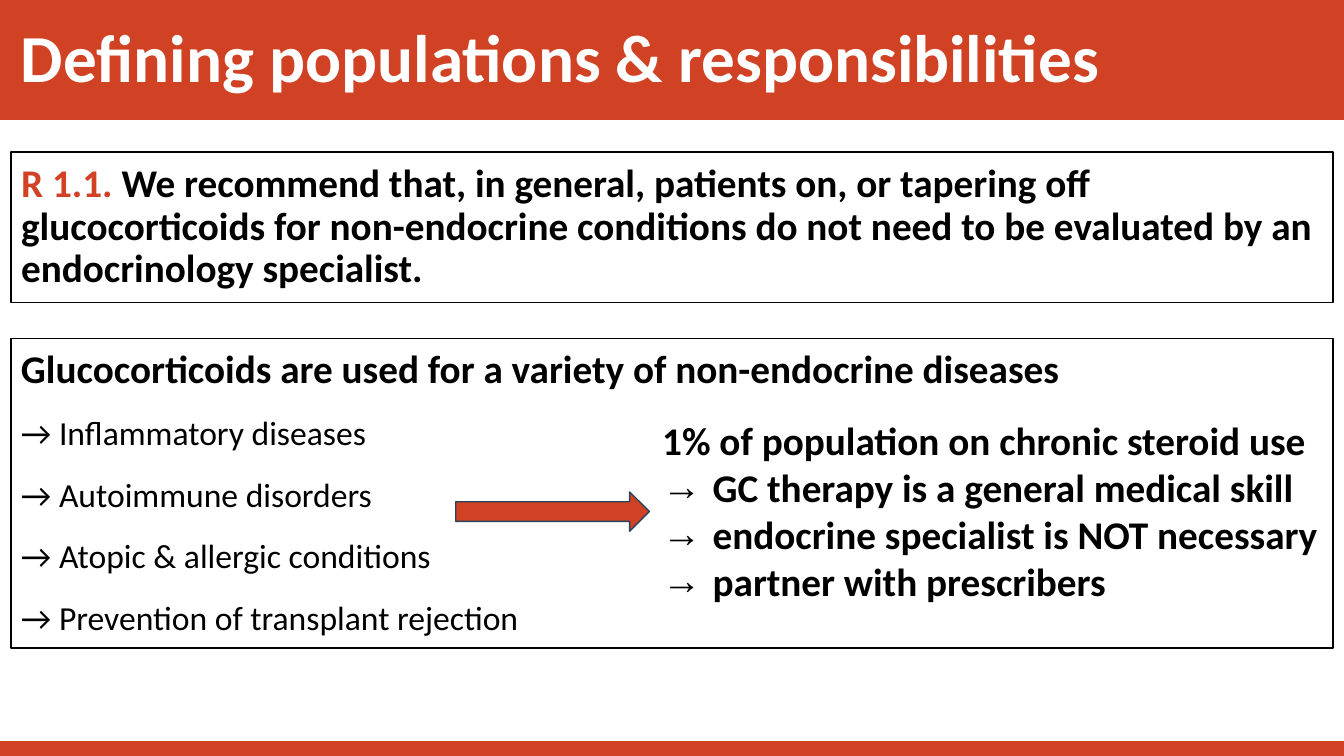
import pptx
import pptx.util
import pptx.dml.color
import pptx.enum.shapes
import pptx.enum.text
import lxml.etree

# Content: each paragraph is a list of (text, format) runs
RED, BLACK, WHITE, NAVY = "D14224", "000000", "FFFFFF", "28445D"
HEADING = "Defining populations & responsibilities"
RECOMMENDATION = [
    ("R 1.1. ", RED),
    ("We recommend that, in general, patients on, or tapering off "
     "glucocorticoids for non-endocrine conditions do not need to be "
     "evaluated by an endocrinology specialist.", BLACK),
]
USES_TITLE = "Glucocorticoids are used for a variety of non-endocrine diseases"
USES = ["Inflammatory diseases", "Autoimmune disorders",
        "Atopic & allergic conditions", "Prevention of transplant rejection"]
FACT = "1% of population on chronic steroid use"
CONSEQUENCES = ["GC therapy is a general medical skill",
                "endocrine specialist is NOT necessary",
                "partner with prescribers"]

# Layout in inches
W, H = 13.33, 7.5
MARGIN = 0.11
INNER = W - 2 * MARGIN
HEADER_H, FOOTER_H = 1.18, 0.14
SHAPES = pptx.enum.shapes.MSO_SHAPE
ANCHOR = pptx.enum.text.MSO_ANCHOR


def color(value):
    return pptx.dml.color.RGBColor.from_string(value)


def paint(sp, fill, line):
    sp.fill.solid()
    sp.fill.fore_color.rgb = color(fill)
    sp.line.color.rgb = color(line)
    sp.line.width = pptx.util.Pt(1)


def place(sp, left, top, width, height):
    sp.left, sp.top, sp.width, sp.height = map(
        pptx.util.Inches, (left, top, width, height))


def add_box(s, box, fill, line, kind=SHAPES.RECTANGLE):
    sp = s.shapes.add_shape(kind, *map(pptx.util.Inches, box))
    sp.shadow.inherit = False
    paint(sp, fill, line)
    return sp


def prepare(sp, anchor=ANCHOR.MIDDLE):
    tf = sp.text_frame
    tf.word_wrap = True
    tf.auto_size = pptx.enum.text.MSO_AUTO_SIZE.NONE
    tf.vertical_anchor = anchor
    return tf


def add_bullet(p, char):
    pPr = p._p.get_or_add_pPr()
    pPr.set("marL", str(pptx.util.Inches(0.5)))
    pPr.set("indent", str(-pptx.util.Inches(0.5)))
    for tag, key, value in (("buFont", "typeface", "Arial"), ("buChar", "char", char)):
        lxml.etree.SubElement(pPr, pptx.oxml.ns.qn("a:" + tag)).set(key, value)


def write(tf, runs, size=28, bold=True, fill=BLACK, spaced=True, bullet=None):
    """Add one paragraph; runs is a string or a list of (text, colour)."""
    first = not tf.paragraphs[0].runs
    p = tf.paragraphs[0] if first else tf.add_paragraph()
    p.alignment = pptx.enum.text.PP_ALIGN.LEFT
    if spaced:
        p.line_spacing = 0.9
        p.space_before = pptx.util.Pt(0 if first else 12)
        p.space_after = pptx.util.Pt(6)
    if bullet:
        add_bullet(p, bullet)
    for text, rgb in [(runs, fill)] if isinstance(runs, str) else runs:
        r = p.add_run()
        r.text = text
        r.font.name = "Calibri"
        r.font.size = pptx.util.Pt(size)
        r.font.bold = bold
        r.font.color.rgb = color(rgb)


def main():
    prs = pptx.Presentation()
    prs.slide_width, prs.slide_height = pptx.util.Inches(W), pptx.util.Inches(H)
    s = prs.slides.add_slide(prs.slide_layouts[5])

    # Header and footer bands
    for top, height in ((0, HEADER_H), (H - FOOTER_H, FOOTER_H)):
        add_box(s, (0, top, W, height), RED, RED)
    heading = s.shapes.add_textbox(
        *map(pptx.util.Inches, (MARGIN, 0.12, INNER, 0.96)))
    write(prepare(heading), HEADING, size=48, fill=WHITE)

    # Recommendation in the title placeholder
    title = s.shapes.title
    place(title, MARGIN, 1.51, INNER, 1.49)
    paint(title, WHITE, BLACK)
    write(prepare(title), RECOMMENDATION)

    # Panel of uses
    tf = prepare(add_box(s, (MARGIN, 3.36, INNER, 3.07), WHITE, BLACK))
    write(tf, USES_TITLE)
    for use in USES:
        write(tf, "→ " + use, size=24, bold=False)

    # Consequences, with the arrow that leads to them
    sp = s.shapes.add_textbox(*map(pptx.util.Inches, (6.47, 4.08, 6.77, 1.99)))
    tf = prepare(sp, anchor=ANCHOR.TOP)
    write(tf, FACT, spaced=False)
    for item in CONSEQUENCES:
        write(tf, item, spaced=False, bullet="→")
    add_box(s, (4.52, 4.88, 1.92, 0.39), RED, NAVY, kind=SHAPES.RIGHT_ARROW)

    prs.save("out.pptx")


if __name__ == "__main__":
    main()
